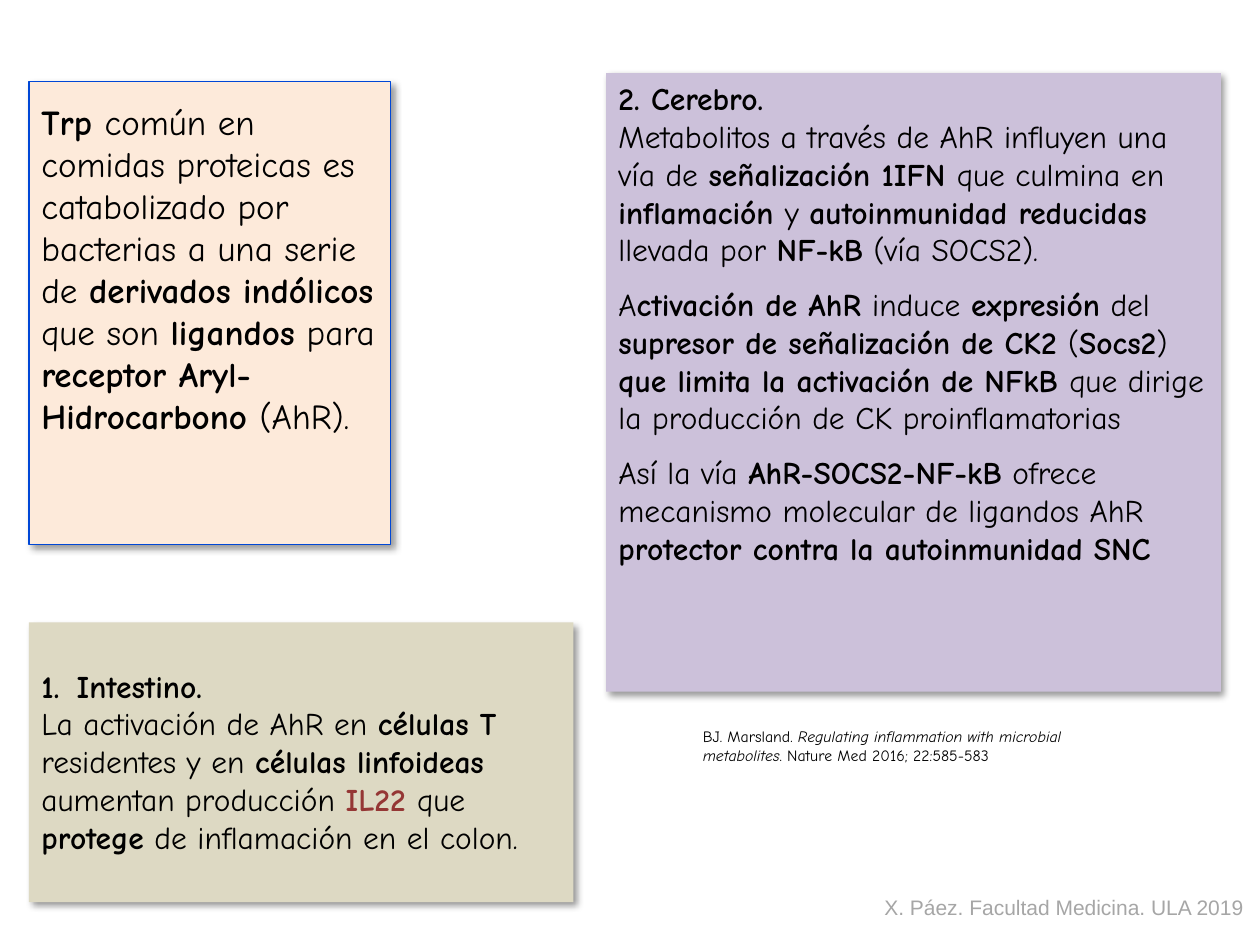
from dataclasses import dataclass

from lxml import etree
from pptx import Presentation
from pptx.dml.color import RGBColor
from pptx.enum.shapes import MSO_SHAPE
from pptx.enum.text import MSO_ANCHOR, PP_ALIGN
from pptx.oxml.ns import qn
from pptx.util import Inches, Pt

RECTANGLE = MSO_SHAPE.RECTANGLE
TOP = MSO_ANCHOR.TOP
LEFT = PP_ALIGN.LEFT
COLUMNS, ROWS = 100, 75


@dataclass(frozen=True)
class Theme:
    ink: str = "000000"
    accent: str = "953735"
    muted: str = "A6A6A6"
    peach: str = "FDEADA"
    sand: str = "DDD9C3"
    lilac: str = "CCC1DA"
    border: str = "0047D6"
    body_font: str = "Comic Neue"
    footer_font: str = "Arial"
    lead: float = 20
    body: float = 18
    footer: float = 12
    citation: float = 9
    paragraph_gap: float = 9.6


THEME = Theme()
RUN_FORMATS = {
    "*": {"bold": True},
    "/": {"italic": True},
    "!": {"bold": True, "color": THEME.accent},
}


class SlideBuilder:
    def __init__(self, presentation, theme):
        self.theme = theme
        self.column = presentation.slide_width / COLUMNS
        self.row = presentation.slide_height / ROWS
        self.slide = presentation.slides.add_slide(presentation.slide_layouts[6])

    def place(self, left, top, width, height):
        return (round(left * self.column), round(top * self.row),
                round(width * self.column), round(height * self.row))

    def fill_text(self, shape, paragraphs, size, font=None, color=None,
                  top_inset=0.05, wrap=True, gaps=(), numbered=()):
        """Fill a shape; '|' separates runs and a leading mark picks a run format.

        gaps and numbered hold the indexes of spaced and numbered paragraphs.
        """
        frame = shape.text_frame
        settings = {"word_wrap": wrap, "vertical_anchor": TOP,
                    "margin_top": Inches(top_inset)}
        for name, value in settings.items():
            setattr(frame, name, value)
        for index, text in enumerate(paragraphs):
            paragraph = frame.paragraphs[0] if index == 0 else frame.add_paragraph()
            paragraph.alignment = LEFT
            if index in gaps:
                paragraph.space_before = Pt(self.theme.paragraph_gap)
            if index in numbered:
                self.number(paragraph)
            for part in filter(None, text.split("|")):
                run_format = RUN_FORMATS.get(part[0], {})
                run = paragraph.add_run()
                run.text = part[1:] if run_format else part
                values = {"size": Pt(size), "name": font or self.theme.body_font,
                          "bold": run_format.get("bold", False),
                          "italic": run_format.get("italic", False)}
                for name, value in values.items():
                    setattr(run.font, name, value)
                run.font.color.rgb = RGBColor.from_string(
                    run_format.get("color", color or self.theme.ink))

    def number(self, paragraph):
        properties = paragraph._p.get_or_add_pPr()
        indent = Inches(0.28)
        properties.set("marL", str(indent))
        properties.set("indent", str(-indent))
        etree.SubElement(properties, qn("a:buAutoNum"), type="arabicPeriod")

    def cast_shadow(self, shape):
        shape.shadow.inherit = False
        effects = shape._element.spPr.find(qn("a:effectLst"))
        shadow = etree.SubElement(
            effects, qn("a:outerShdw"), blurRad=str(Pt(4)), dist=str(Pt(3)),
            dir=str(45 * 60000), algn="tl", rotWithShape="0")
        color = etree.SubElement(shadow, qn("a:srgbClr"), val=self.theme.ink)
        etree.SubElement(color, qn("a:alpha"), val="40000")

    def card(self, area, fill, paragraphs, size, border=None, **options):
        shape = self.slide.shapes.add_shape(RECTANGLE, *self.place(*area))
        shape.fill.solid()
        shape.fill.fore_color.rgb = RGBColor.from_string(fill)
        if border:
            shape.line.color.rgb = RGBColor.from_string(border)
            shape.line.width = Pt(0.75)
        else:
            shape.line.fill.background()
        self.cast_shadow(shape)
        self.fill_text(shape, paragraphs, size, **options)

    def label(self, area, text, size, **options):
        box = self.slide.shapes.add_textbox(*self.place(*area))
        self.fill_text(box, [text], size, **options)


def main():
    presentation = Presentation()
    presentation.slide_width = Inches(10)
    presentation.slide_height = Inches(7.5)
    builder = SlideBuilder(presentation, THEME)

    builder.label(
        (54.8, 57.2, 35.5, 4),
        "BJ. Marsland. |/Regulating inflammation with microbial metabolites"
        "|. Nature Med 2016; 22:585-583", THEME.citation)
    builder.card(
        (2.3, 6.5, 28.7, 36.7), THEME.peach,
        ["*Trp |común en comidas proteicas es catabolizado por bacterias a una "
         "serie de |*derivados indólicos |que son |*ligandos| para "
         "|*receptor Aryl-Hidrocarbono |(AhR)."],
        THEME.lead, border=THEME.border, top_inset=0.15)
    builder.card(
        (2.3, 49.4, 43.2, 22.2), THEME.sand,
        ["*Intestino.",
         "La activación de AhR en |*células T| residentes y en |*células "
         "linfoideas |aumentan producción |!IL22 |que |*protege"
         "| de inflamación en el colon."],
        THEME.body, top_inset=0.35, numbered=(0,))
    builder.card(
        (48.1, 5.8, 48.8, 49.1), THEME.lilac,
        ["*2. Cerebro.",
         "Metabolitos a través de AhR influyen una vía de |*señalización 1IFN "
         "|que culmina en |*inflamación |y |*autoinmunidad reducidas"
         "| llevada por |*NF-kB| (vía SOCS2).",
         "A|*ctivación de AhR |induce |*expresión| del |*supresor de "
         "señalización de CK2 |(|*Socs2|) |*que limita la activación de NFkB "
         "|que dirige la producción de CK proinflamatorias",
         "Así la vía |*AhR-SOCS2-NF-kB| ofrece mecanismo molecular de ligandos "
         "AhR |*protector contra la autoinmunidad SNC"],
        THEME.body, gaps=(2, 3))
    builder.label(
        (69.2, 70.5, 30.8, 3), "X. Páez. Facultad Medicina. ULA 2019",
        THEME.footer, font=THEME.footer_font, color=THEME.muted, wrap=False)

    presentation.save("out.pptx")


if __name__ == "__main__":
    main()
